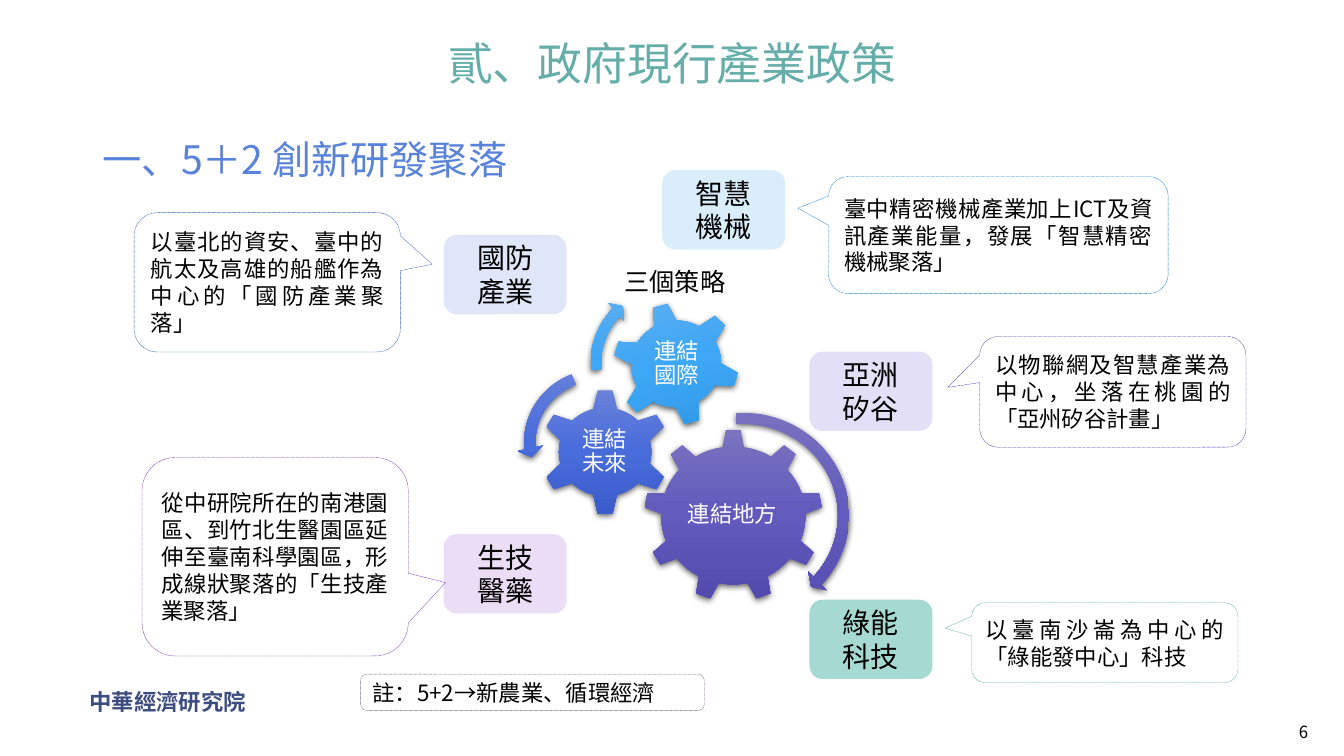
from copy import deepcopy

from lxml.etree import SubElement
from pptx import Presentation
from pptx.dml.color import RGBColor
from pptx.enum.dml import MSO_LINE
from pptx.enum.shapes import MSO_SHAPE
from pptx.enum.text import MSO_ANCHOR, PP_ALIGN
from pptx.oxml.ns import qn
from pptx.util import Cm, Pt

SANS = "Noto Sans CJK SC"
TITLE_SANS = "Noto Sans CJK JP"

BLACK = RGBColor(0x00, 0x00, 0x00)
WHITE = RGBColor(0xFF, 0xFF, 0xFF)
TEAL = RGBColor(0x65, 0xAD, 0xA8)
HEADING_BLUE = RGBColor(0x59, 0x82, 0xDB)
NAVY = RGBColor(0x3D, 0x4D, 0x7F)
NOTE_LINE = RGBColor(0x7E, 0x65, 0x83)

PURPLE_SHADES = (RGBColor(0x79, 0x73, 0xC0), RGBColor(0x62, 0x5A, 0xBD), RGBColor(0x53, 0x4A, 0xAD))
BLUE_SHADES = (RGBColor(0x69, 0x81, 0xDA), RGBColor(0x49, 0x6C, 0xDB), RGBColor(0x3A, 0x5C, 0xCA))
SKY_SHADES = (RGBColor(0x62, 0xAF, 0xF1), RGBColor(0x3D, 0xA6, 0xF5), RGBColor(0x2C, 0x95, 0xE4))

LABEL_SIZE = (3.1, 2.0)

# Shape, place, rotation, shades, caption, caption place
GEARS = [
    (MSO_SHAPE.GEAR_9, (16.23, 10.82, 4.5, 4.34), 0, PURPLE_SHADES,
     "連結地方", (17.12, 11.86, 2.69, 2.24)),
    (MSO_SHAPE.GEAR_6, (13.61, 9.8, 3.28, 3.18), 0, BLUE_SHADES,
     "連結\n未來", (14.43, 10.62, 1.63, 1.55)),
    (MSO_SHAPE.GEAR_6, (15.44, 7.62, 3.2, 3.1), 345, SKY_SHADES,
     "連結\n國際", (16.15, 8.31, 1.8, 1.73)),
]

# Shape, place, adjustments, shades
ARROWS = [
    (MSO_SHAPE.CIRCULAR_ARROW, (15.85, 10.21, 5.74, 5.56),
     (0.05, 2.99, 24.72, 159.6, 0.06), PURPLE_SHADES),
    (MSO_SHAPE.LEFT_CIRCULAR_ARROW, (13.03, 9.12, 4.17, 4.04),
     (0.07, 4.3, 104.89, 148.38, 0.08), BLUE_SHADES),
    (MSO_SHAPE.CIRCULAR_ARROW, (14.71, 6.96, 4.5, 4.37),
     (0.06, 3.94, 133.14, 105.08, 0.07), SKY_SHADES),
]

# Label, label corner, label fill, callout place, pointer tip, callout line, callout text
INDUSTRIES = [
    ("智慧\n機械", (16.69, 4.29), RGBColor(0xDA, 0xED, 0xFB),
     (20.88, 4.45, 8.56, 2.95), (-0.59, -0.23), RGBColor(0x14, 0x80, 0xD1),
     "臺中精密機械產業加上ICT及資訊產業能量，發展「智慧精密機械聚落」"),
    ("亞洲\n矽谷", (20.4, 8.86), RGBColor(0xE3, 0xDF, 0xF7),
     (24.69, 8.48, 6.71, 2.79), (-0.62, -0.04), RGBColor(0x48, 0x2C, 0xBC),
     "以物聯網及智慧產業為中心，坐落在桃園的「亞州矽谷計畫」"),
    ("綠能\n科技", (20.4, 15.11), RGBColor(0xA7, 0xD9, 0xD3),
     (24.49, 15.19, 6.71, 2.01), (-0.6, -0.18), RGBColor(0x4B, 0xAC, 0xA1),
     "以臺南沙崙為中心的「綠能發中心」科技"),
    ("生技\n醫藥", (11.18, 13.46), RGBColor(0xEB, 0xDD, 0xF6),
     (3.58, 11.53, 6.71, 5.0), (0.64, 0.13), RGBColor(0x76, 0x2E, 0xB1),
     "從中研院所在的南港園區、到竹北生醫園區延伸至臺南科學園區，形成線狀聚落的「生技產業聚落」"),
    ("國防\n產業", (11.18, 5.92), RGBColor(0xDE, 0xE6, 0xF8),
     (3.38, 5.36, 6.71, 3.51), (0.62, -0.13), RGBColor(0x29, 0x58, 0xBE),
     "以臺北的資安、臺中的航太及高雄的船艦作為中心的「國防產業聚落」"),
]


def write_text(shape, text, size, color=BLACK, align=PP_ALIGN.LEFT,
               anchor=MSO_ANCHOR.MIDDLE, font_name=SANS, bold=False):
    frame = shape.text_frame
    frame.word_wrap = True
    frame.vertical_anchor = anchor
    paragraph = frame.paragraphs[0]
    paragraph.text = text
    paragraph.alignment = align
    font = paragraph.font
    font.size = Pt(size)
    font.bold = bold
    font.color.rgb = color
    font.name = font_name
    # East Asian typeface
    defaults = paragraph._p.pPr.find(qn("a:defRPr"))
    SubElement(defaults, qn("a:ea"), typeface=font_name)
    return paragraph


def add_text(slide, place, text, size, **style):
    box = slide.shapes.add_textbox(*map(Cm, place))
    return box, write_text(box, text, size, **style)


def add_plain_shape(slide, kind, place):
    shape = slide.shapes.add_shape(kind, *map(Cm, place))
    shape.shadow.inherit = False
    shape.fill.background()
    shape.line.fill.background()
    return shape


def add_shaded_shape(slide, kind, place, shades):
    shape = add_plain_shape(slide, kind, place)
    # Vertical three-stop gradient
    shape.fill.gradient()
    shape.fill.gradient_angle = 270
    stop_list = shape._element.spPr.find(".//" + qn("a:gsLst"))
    stop_list.insert(1, deepcopy(stop_list[0]))
    for stop, position, shade in zip(shape.fill.gradient_stops, (0, 0.5, 1), shades):
        stop.position = position
        stop.color.rgb = shade
    # Soft shadow below
    effects = shape._element.spPr.find(qn("a:effectLst"))
    shadow = SubElement(effects, qn("a:outerShdw"), blurRad=str(Pt(4.5)),
                        dist=str(Pt(1.5)), dir="5400000", algn="ctr", rotWithShape="0")
    shadow_color = SubElement(shadow, qn("a:srgbClr"), val="000000")
    SubElement(shadow_color, qn("a:alpha"), val="63000")
    return shape


def add_gear(slide, kind, place, rotation, shades, caption, caption_place):
    gear = add_shaded_shape(slide, kind, place, shades)
    gear.rotation = rotation
    box, paragraph = add_text(slide, caption_place, caption, 16,
                              color=WHITE, align=PP_ALIGN.CENTER)
    frame = box.text_frame
    frame.margin_left = frame.margin_right = Cm(0.05)
    frame.margin_top = frame.margin_bottom = Cm(0.05)
    paragraph.line_spacing = 0.9


def add_arrow(slide, kind, place, adjustments, shades):
    arrow = add_shaded_shape(slide, kind, place, shades)
    for index, value in enumerate(adjustments):
        arrow.adjustments[index] = value


def add_dotted_box(slide, kind, place, line_color, text):
    shape = add_plain_shape(slide, kind, place)
    shape.line.color.rgb = line_color
    shape.line.width = Pt(0.25)
    shape.line.dash_style = MSO_LINE.ROUND_DOT
    write_text(shape, text, 16, align=PP_ALIGN.JUSTIFY)
    return shape


def add_industry(slide, name, corner, fill, place, tip, line_color, text):
    label = add_plain_shape(slide, MSO_SHAPE.ROUNDED_RECTANGLE, corner + LABEL_SIZE)
    label.fill.solid()
    label.fill.fore_color.rgb = fill
    write_text(label, name, 20, align=PP_ALIGN.CENTER)
    callout = add_dotted_box(slide, MSO_SHAPE.ROUNDED_RECTANGULAR_CALLOUT,
                             place, line_color, text)
    callout.adjustments[0], callout.adjustments[1] = tip


def main():
    presentation = Presentation()
    presentation.slide_width = Cm(33.87)
    presentation.slide_height = Cm(19.05)
    slide = presentation.slides.add_slide(presentation.slide_layouts[6])

    # Footer
    add_text(slide, (2.01, 17.2, 4.6, 0.94), "中華經濟研究院", 16, color=NAVY, bold=True)
    add_text(slide, (27.61, 17.91, 5.61, 1.04), "6", 12, align=PP_ALIGN.RIGHT)

    # Title and heading
    _, title = add_text(slide, (2.34, 0.3, 29.21, 2.74), "貳、政府現行產業政策", 32,
                        color=TEAL, align=PP_ALIGN.CENTER, font_name=TITLE_SANS)
    title.line_spacing = 0.9
    _, heading = add_text(slide, (2.34, 3.05, 29.21, 12.09), "一、5＋2 創新研發聚落", 28,
                          color=HEADING_BLUE, anchor=MSO_ANCHOR.TOP)
    heading.line_spacing = Pt(40)

    # Three strategies
    for gear in GEARS:
        add_gear(slide, *gear)
    for arrow in ARROWS:
        add_arrow(slide, *arrow)
    add_text(slide, (15.49, 6.53, 3.33, 1.14), "三個策略", 18)

    # Industries and note
    for industry in INDUSTRIES:
        add_industry(slide, *industry)
    add_dotted_box(slide, MSO_SHAPE.ROUNDED_RECTANGLE, (9.09, 16.99, 8.66, 0.91),
                   NOTE_LINE, "註：5+2→新農業、循環經濟")

    presentation.save("out.pptx")


if __name__ == "__main__":
    main()
